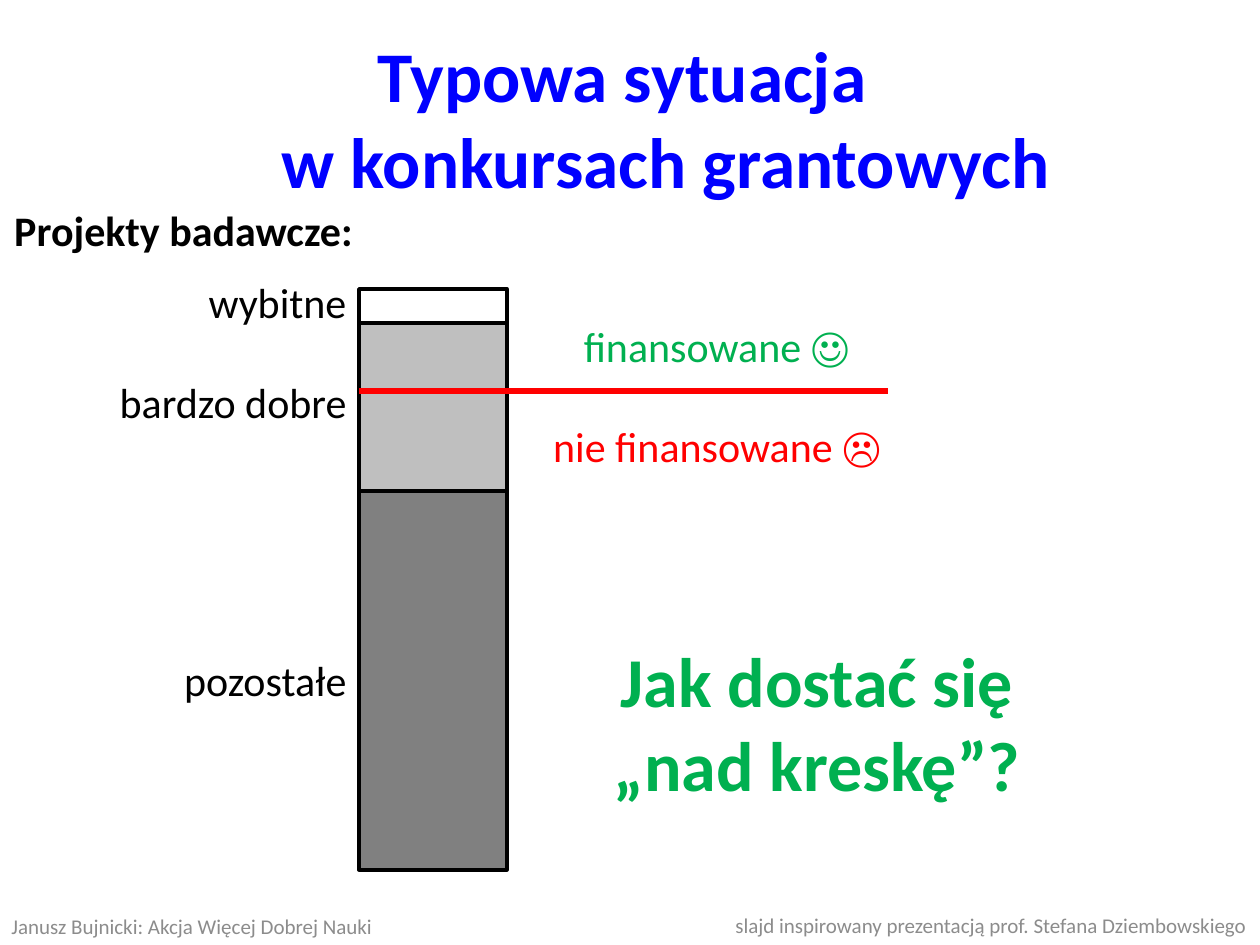
from lxml.etree import SubElement
from pptx import Presentation
from pptx.dml.color import RGBColor
from pptx.enum.shapes import MSO_CONNECTOR, MSO_SHAPE
from pptx.enum.text import MSO_ANCHOR, PP_ALIGN
from pptx.oxml.ns import qn
from pptx.util import Emu, Pt

PX_PER_INCH = 126
FONT = "Calibri"
BLACK = RGBColor(0x00, 0x00, 0x00)
WHITE = RGBColor(0xFF, 0xFF, 0xFF)
LIGHT_GRAY = RGBColor(0xBF, 0xBF, 0xBF)
DARK_GRAY = RGBColor(0x80, 0x80, 0x80)
FOOTER_GRAY = RGBColor(0x8C, 0x8C, 0x8C)
BLUE = RGBColor(0x00, 0x00, 0xFF)
GREEN = RGBColor(0x00, 0xB0, 0x50)
RED = RGBColor(0xFF, 0x00, 0x00)

LABEL_HEIGHT = 63
PROJECT_CLASSES = [
    ("wybitne", WHITE, 34, 165, -19),
    ("bardzo dobre", LIGHT_GRAY, 168, 254, 81),
    ("pozostałe", DARK_GRAY, 379, 189, 359),
]


def px(length):
    """Convert whole pixels to EMU."""
    return Emu(round(length * 914400 / PX_PER_INCH))


def add_text(shapes, box, text, size, color, align=PP_ALIGN.CENTER,
             bold=False, wrap=False, anchor=MSO_ANCHOR.TOP):
    """Add a single-paragraph text box and return its paragraph."""
    frame = shapes.add_textbox(*map(px, box)).text_frame
    frame.word_wrap = wrap
    frame.vertical_anchor = anchor
    paragraph = frame.paragraphs[0]
    paragraph.text = text
    paragraph.alignment = align
    font = paragraph.font
    font.name, font.size, font.bold = FONT, Pt(size), bold
    font.color.rgb = color
    return paragraph


def add_title(shapes, box):
    """Add the two-line title with its hanging indent."""
    title = add_text(shapes, box, "Typowa sytuacja \vw konkursach grantowych",
                     40.7, BLUE, bold=True, wrap=True, anchor=MSO_ANCHOR.MIDDLE)
    properties = title._p.get_or_add_pPr()
    properties.set("marL", str(px(71)))
    properties.set("indent", str(px(-71)))


def add_project_bar(shapes, box):
    """Stack the project classes in the box, with labels to its left."""
    left, top, width = box
    segment_top = top
    for label, color, height, label_width, label_offset in PROJECT_CLASSES:
        segment = shapes.add_shape(
            MSO_SHAPE.RECTANGLE, *map(px, (left, segment_top, width, height)))
        segment.shadow.inherit = False
        segment.fill.solid()
        segment.fill.fore_color.rgb = color
        segment.line.color.rgb = BLACK
        segment.line.width = Pt(2)
        label_box = (left - label_width, top + label_offset,
                     label_width, LABEL_HEIGHT)
        add_text(shapes, label_box, label, 24, BLACK, PP_ALIGN.RIGHT)
        segment_top += height


def add_funding_line(shapes, box):
    """Group the funding threshold with the outcomes above and below it."""
    left, top, width = box
    group = shapes.add_group_shape().shapes
    threshold = group.add_connector(
        MSO_CONNECTOR.STRAIGHT, *map(px, (left, top, left + width, top)))
    threshold.line.color.rgb = RED
    threshold.line.width = Pt(3)
    SubElement(threshold._element.spPr, qn("a:effectLst"))
    add_text(group, (left + 209, top - 77, 297, LABEL_HEIGHT),
             "finansowane ☺", 24, GREEN)
    add_text(group, (left + 181, top + 23, 354, LABEL_HEIGHT),
             "nie finansowane ☹", 24, RED)


def add_footer(shapes, box):
    """Add the author on the left and the credit on the right."""
    left, top, width, height = box
    credit_width = 542
    add_text(shapes, (left + width - credit_width, top - 1, credit_width, height),
             "slajd inspirowany prezentacją prof. Stefana Dziembowskiego",
             12, FOOTER_GRAY, PP_ALIGN.RIGHT, wrap=True, anchor=MSO_ANCHOR.MIDDLE)
    add_text(shapes, (left, top, 393, height),
             "Janusz Bujnicki: Akcja Więcej Dobrej Nauki",
             12, FOOTER_GRAY, PP_ALIGN.LEFT, wrap=True, anchor=MSO_ANCHOR.MIDDLE)


def main():
    """Build and save the slide."""
    presentation = Presentation()
    presentation.slide_width, presentation.slide_height = px(1260), px(945)
    shapes = presentation.slides.add_slide(presentation.slide_layouts[6]).shapes
    add_project_bar(shapes, (359, 289, 148))
    add_title(shapes, (0, 38, 1260, 158))
    add_text(shapes, (0, 198, 367, LABEL_HEIGHT), "Projekty badawcze:",
             24, BLACK, bold=True)
    add_funding_line(shapes, (359, 391, 529))
    add_text(shapes, (599, 631, 436, 183), "Jak dostać się\v„nad kreskę”?",
             40, GREEN, bold=True)
    add_footer(shapes, (-1, 908, 1260, 37))
    presentation.save("out.pptx")


if __name__ == "__main__":
    main()
